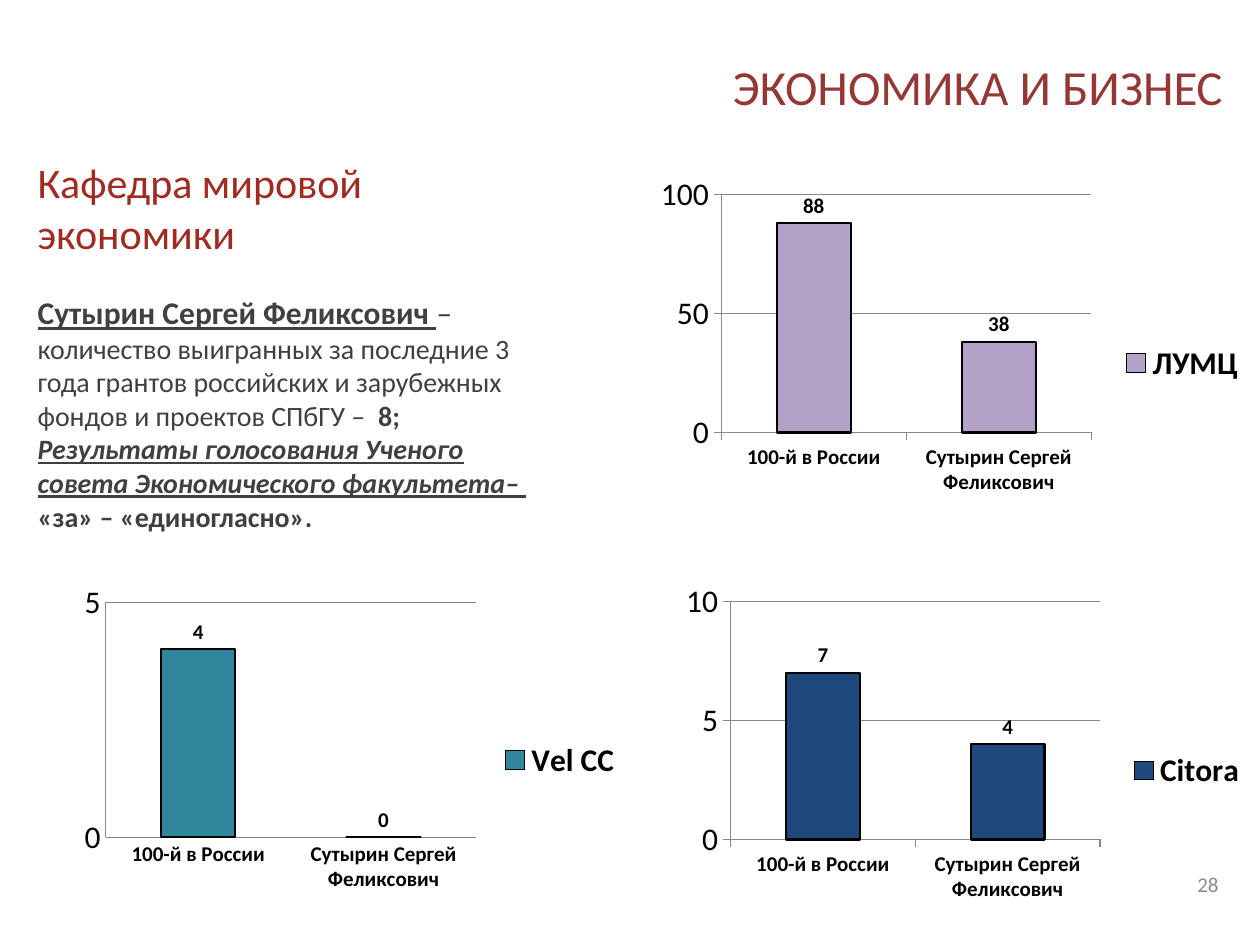
from lxml import etree
from pptx import Presentation
from pptx.chart import data as chart_data
from pptx.dml.color import RGBColor
from pptx.enum import chart as chart_enum, text
from pptx.oxml import ns
from pptx.util import Inches, Pt

FONT = "Calibri"
COLORS = {
    "title": "953735",
    "heading": "9F2B22",
    "body": "404040",
    "number": "8C8C8C",
    "black": "000000",
    "grid": "878787",
    "lilac": "B3A2C7",
    "teal": "31859C",
    "navy": "1F497D",
}
CATEGORIES = ["100-й в России", "Сутырин Сергей Феликсович"]
CHARTS = [
    ("ЛУМЦ", (88, 38), "lilac", (5.07, 1.31), 100, 50, True, (0.133, 0.075, 0.597, 0.599)),
    ("Vel CC", (4, 0), "teal", (0.12, 4.46), 5, 5, False, (0.146, 0.102, 0.598, 0.592)),
    ("Citora", (7, 4), "navy", (5.08, 4.54), 10, 5, True, (0.146, 0.075, 0.596, 0.599)),
]
DESCRIPTION = [
    [
        ("Сутырин Сергей Феликсович ", 18, "bu"),
        ("– ", 18, ""),
        ("количество выигранных за последние 3 года грантов российских "
         "и зарубежных фондов и проектов СПбГУ –  ", 16, ""),
        ("8;", 16, "b"),
    ],
    [
        ("Результаты голосования Ученого совета Экономического факультета", 16, "biu"),
        ("– ", 16, "bu"),
    ],
    [("«за» – «единогласно».", 16, "b")],
]


def rgb(name):
    return RGBColor.from_string(COLORS[name])


def style_font(font, size, color, bold=False):
    font.name = FONT
    font.size = Pt(size)
    font.bold = bold
    font.color.rgb = rgb(color)


def place(box, left, top, width, height):
    box.left, box.top = Inches(left), Inches(top)
    box.width, box.height = Inches(width), Inches(height)


def add_box(page, bounds, anchor):
    box = page.shapes.add_textbox(*(Inches(value) for value in bounds))
    box.text_frame.word_wrap = True
    box.text_frame.vertical_anchor = anchor
    return box


def set_line(box, words, size, color, align):
    para = box.text_frame.paragraphs[0]
    para.text = words
    para.alignment = align
    style_font(para.runs[0].font, size, color)


def add_line(page, bounds, words, size, color, align):
    box = add_box(page, bounds, text.MSO_ANCHOR.MIDDLE)
    set_line(box, words, size, color, align)


def add_title(page):
    title = page.shapes.title
    place(title, 2.56, 0.3, 7.24, 0.77)
    title.text_frame.vertical_anchor = text.MSO_ANCHOR.MIDDLE
    set_line(title, "ЭКОНОМИКА И БИЗНЕС", 28, "title", text.PP_ALIGN.RIGHT)


def add_description(page):
    frame = add_box(page, (0.2, 2.28, 4.25, 2.02), text.MSO_ANCHOR.TOP).text_frame
    for index, spans in enumerate(DESCRIPTION):
        para = frame.add_paragraph() if index else frame.paragraphs[0]
        for words, size, marks in spans:
            span = para.add_run()
            span.text = words
            style_font(span.font, size, "body", "b" in marks)
            span.font.italic = "i" in marks
            span.font.underline = "u" in marks


def set_plot_layout(chart, fractions):
    plot_area = chart.element.find(".//" + ns.qn("c:plotArea"))
    for old in plot_area.findall(ns.qn("c:layout")):
        plot_area.remove(old)
    layout = etree.Element(ns.qn("c:layout"))
    manual = etree.SubElement(layout, ns.qn("c:manualLayout"))
    settings = [("layoutTarget", "inner"), ("xMode", "edge"), ("yMode", "edge")]
    settings += zip("xywh", fractions)
    for tag, value in settings:
        etree.SubElement(manual, ns.qn("c:" + tag)).set("val", str(value))
    plot_area.insert(0, layout)


def style_axes(chart, maximum, step, ticks):
    mark = chart_enum.XL_TICK_MARK.OUTSIDE if ticks else chart_enum.XL_TICK_MARK.NONE
    value_axis, category_axis = chart.value_axis, chart.category_axis
    value_axis.minimum_scale, value_axis.maximum_scale = 0, maximum
    value_axis.major_unit = step
    value_axis.has_major_gridlines = True
    for axis in (value_axis, category_axis):
        axis.major_tick_mark = mark
        axis.minor_tick_mark = chart_enum.XL_TICK_MARK.NONE
    for line in (value_axis.format.line, category_axis.format.line,
                 value_axis.major_gridlines.format.line):
        line.color.rgb = rgb("grid")
        line.width = Pt(0.75)
    style_font(value_axis.tick_labels.font, 18, "black")
    style_font(category_axis.tick_labels.font, 12, "black", True)


def add_column_chart(page, name, values, color, corner, maximum, step, ticks, fractions):
    source = chart_data.CategoryChartData()
    source.categories = CATEGORIES
    source.add_series(name, values)
    left, top = corner
    chart = page.shapes.add_chart(
        chart_enum.XL_CHART_TYPE.COLUMN_CLUSTERED,
        Inches(left), Inches(top), Inches(4.92), Inches(3.15), source,
    ).chart
    style_font(chart.font, 18, "black")
    chart.has_title = False
    chart.has_legend = True
    chart.legend.position = chart_enum.XL_LEGEND_POSITION.RIGHT
    chart.legend.include_in_layout = False
    style_font(chart.legend.font, 18, "black", True)
    style_axes(chart, maximum, step, ticks)
    plot = chart.plots[0]
    plot.vary_by_categories = False
    plot.gap_width = 150
    series = plot.series[0]
    series.format.fill.solid()
    series.format.fill.fore_color.rgb = rgb(color)
    series.format.line.color.rgb = rgb("black")
    series.format.line.width = Pt(1.25)
    labels = series.data_labels
    labels.show_value = True
    labels.position = chart_enum.XL_LABEL_POSITION.OUTSIDE_END
    style_font(labels.font, 12, "black", True)
    set_plot_layout(chart, fractions)


def main():
    deck = Presentation()
    deck.slide_width, deck.slide_height = Inches(10), Inches(7.5)
    page = deck.slides.add_slide(deck.slide_layouts[5])
    add_title(page)
    add_line(page, (0.2, 1.19, 4.25, 0.91), "Кафедра мировой экономики",
             24, "heading", text.PP_ALIGN.LEFT)
    add_description(page)
    for settings in CHARTS:
        add_column_chart(page, *settings)
    add_line(page, (7.44, 6.82, 2.33, 0.4), "28", 12, "number", text.PP_ALIGN.RIGHT)
    deck.save("out.pptx")


if __name__ == "__main__":
    main()
